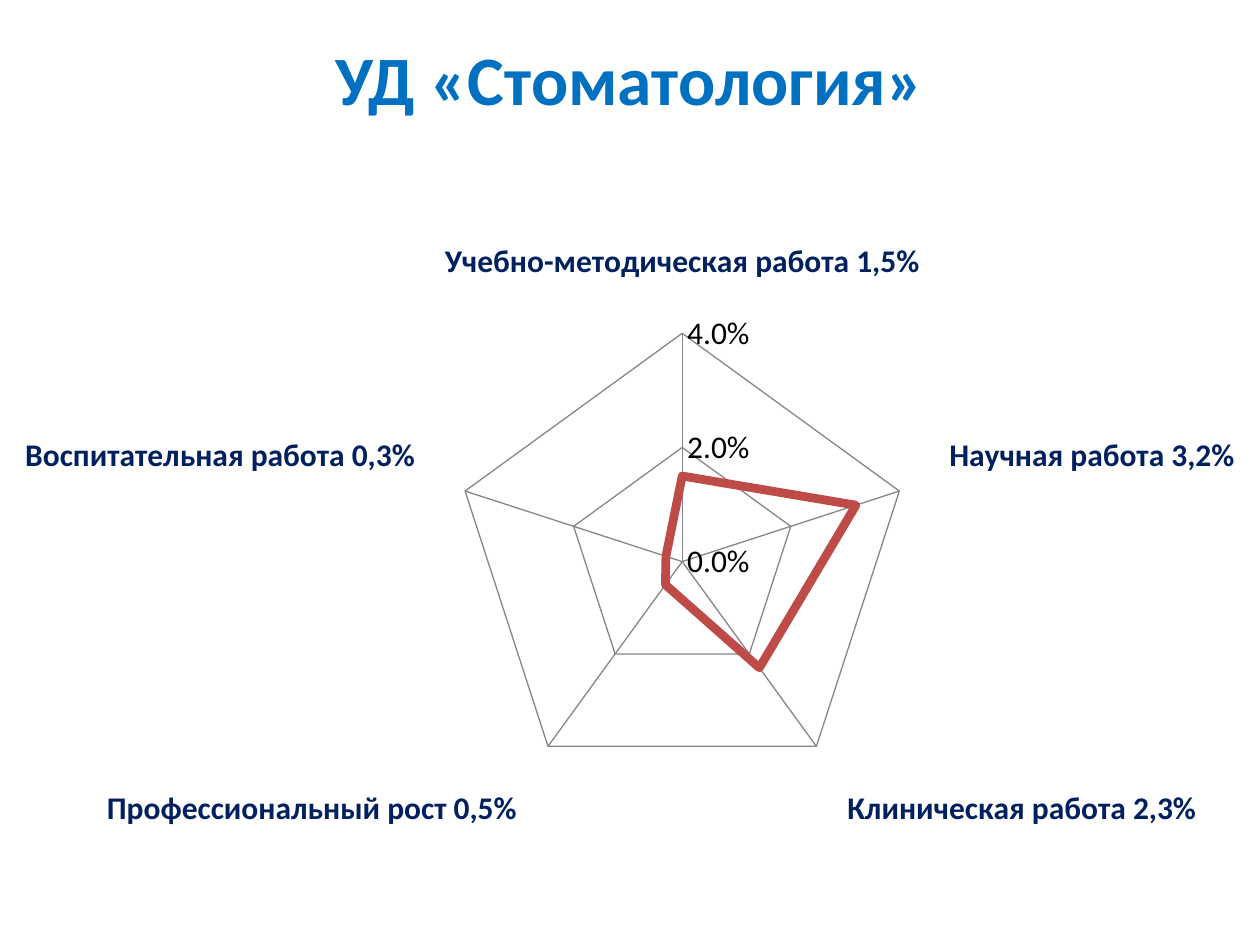
from typing import NamedTuple

from pptx import Presentation
from pptx.chart.data import CategoryChartData
from pptx.dml.color import RGBColor
from pptx.enum.chart import XL_CHART_TYPE as ChartType, XL_MARKER_STYLE as Marker
from pptx.enum.chart import XL_TICK_MARK as Tick
from pptx.enum.text import MSO_ANCHOR as Anchor, PP_ALIGN as Align
from pptx.util import Inches, Pt

FONT = "Calibri"
GRID = "868686"


class Score(NamedTuple):
    label: str
    share: float


SCORES = [
    Score("Учебно-методическая работа 1,5%", 0.015),
    Score("Научная работа 3,2%", 0.032),
    Score("Клиническая работа 2,3%", 0.023),
    Score("Профессиональный рост 0,5%", 0.005),
    Score("Воспитательная работа 0,3%", 0.003),
]


def colour(code: str) -> RGBColor:
    return RGBColor.from_string(code)


def style_font(font, size: float, code: str, bold: bool) -> None:
    font.name = FONT
    font.size = Pt(size)
    font.bold = bold
    font.color.rgb = colour(code)


def style_line(line, code: str, width: float) -> None:
    line.color.rgb = colour(code)
    line.width = Pt(width)


def add_title(slide, text: str) -> None:
    box = slide.shapes.add_textbox(Inches(0.5), Inches(0.31), Inches(9), Inches(0.61))
    frame = box.text_frame
    frame.word_wrap = True
    frame.vertical_anchor = Anchor.MIDDLE
    para = frame.paragraphs[0]
    para.alignment = Align.CENTER
    span = para.add_run()
    span.text = text
    style_font(span.font, 39.6, "0070C0", True)


def style_axis(axis, text_colour: str, bold: bool) -> None:
    axis.has_major_gridlines = True
    axis.major_tick_mark = axis.minor_tick_mark = Tick.NONE
    style_line(axis.major_gridlines.format.line, GRID, 0.75)
    style_line(axis.format.line, GRID, 0.75)
    style_font(axis.tick_labels.font, 18, text_colour, bold)


def add_radar(slide, scores: list[Score]) -> None:
    data = CategoryChartData(number_format="0.0%")
    data.categories = [score.label for score in scores]
    data.add_series("Series 1", [score.share for score in scores])
    chart = slide.shapes.add_chart(
        ChartType.RADAR, Inches(0), Inches(0.99), Inches(10), Inches(6.51), data
    ).chart
    chart.has_legend = False
    chart.has_title = False
    style_font(chart.font, 18, "000000", False)

    style_axis(chart.category_axis, "002060", True)
    values = chart.value_axis
    style_axis(values, "000000", False)
    values.minimum_scale, values.maximum_scale, values.major_unit = 0, 0.04, 0.02
    values.tick_labels.number_format = "0.0%"
    values.tick_labels.number_format_is_linked = False

    plot = chart.plots[0]
    plot.vary_by_categories = False
    series = plot.series[0]
    series.marker.style = Marker.NONE
    style_line(series.format.line, "BE4B48", 5)


def main() -> None:
    deck = Presentation()
    deck.slide_width, deck.slide_height = Inches(10), Inches(7.5)
    slide = deck.slides.add_slide(deck.slide_layouts[6])
    add_title(slide, "УД «Стоматология»")
    add_radar(slide, SCORES)
    deck.save("out.pptx")


if __name__ == "__main__":
    main()
